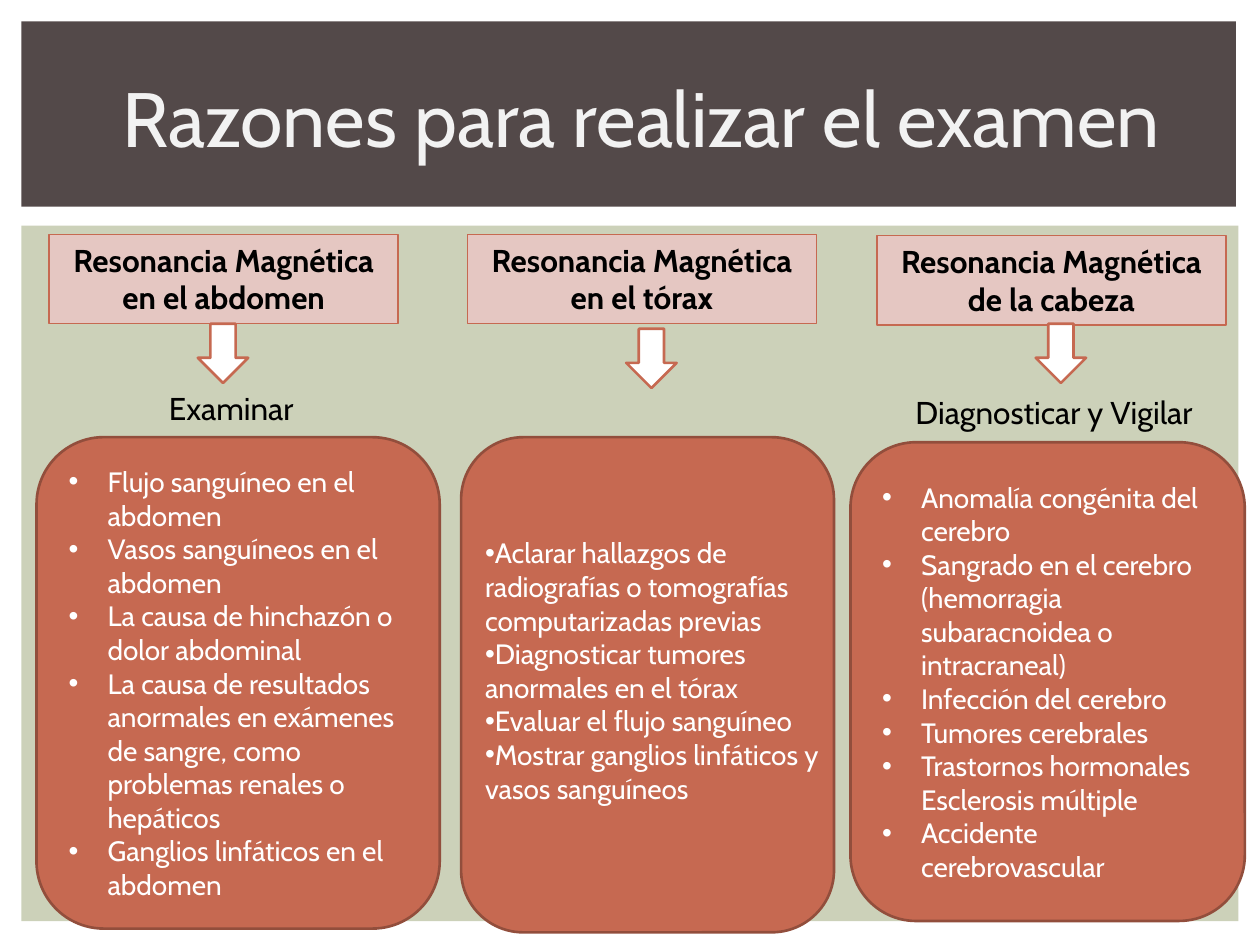
"""Build the slide on the reasons for a magnetic resonance exam."""
from dataclasses import dataclass
from typing import Optional

from lxml.etree import SubElement
from pptx import Presentation
from pptx.dml.color import RGBColor
from pptx.enum.shapes import MSO_SHAPE as Preset
from pptx.enum.text import MSO_ANCHOR as Anchor, MSO_AUTO_SIZE as AutoSize, PP_ALIGN as Align
from pptx.oxml.ns import qn
from pptx.util import Inches, Pt


@dataclass(frozen=True)
class Theme:
    font: str = "Cabin"
    band: str = "534949"
    field: str = "CCD1B9"
    pale: str = "E5C7C2"
    accent: str = "C66951"
    edge: str = "924E3C"
    title: str = "F2F2F2"
    light: str = "FFFFFF"
    dark: str = "000000"
    title_size: int = 44
    label_size: int = 18
    list_size: int = 16


@dataclass(frozen=True)
class Area:
    left: float
    top: float
    width: float
    height: float

    def lengths(self) -> dict:
        return {name: Inches(getattr(self, name)) for name in ("left", "top", "width", "height")}


@dataclass(frozen=True)
class Column:
    heading: str
    heading_at: Area
    arrow_at: Area
    card_at: Area
    reasons: tuple[str, ...]
    verb: str = ""
    verb_at: Optional[Area] = None
    list_at: Optional[Area] = None


THEME = Theme()
HANGING = 0.31

COLUMNS = (
    Column(
        "Resonancia Magnética en el abdomen",
        Area(0.39, 1.86, 2.77, 0.71), Area(1.57, 2.57, 0.4, 0.47), Area(0.29, 3.47, 3.2, 3.9),
        (
            "Flujo sanguíneo en el abdomen",
            "Vasos sanguíneos en el abdomen",
            "La causa de hinchazón o dolor abdominal",
            "La causa de resultados anormales en exámenes de sangre, como problemas renales o hepáticos",
            "Ganglios linfáticos en el abdomen",
        ),
        verb="Examinar", verb_at=Area(0.51, 3.04, 2.65, 0.4),
    ),
    Column(
        "Resonancia Magnética en el tórax",
        Area(3.71, 1.86, 2.77, 0.71), Area(4.97, 2.61, 0.4, 0.47), Area(3.66, 3.47, 2.96, 3.93),
        (
            "Aclarar hallazgos de radiografías o tomografías computarizadas previas",
            "Diagnosticar tumores anormales en el tórax",
            "Evaluar el flujo sanguíneo",
            "Mostrar ganglios linfáticos y vasos sanguíneos",
        ),
        list_at=Area(3.75, 4.06, 2.85, 2.52),
    ),
    Column(
        "Resonancia Magnética de la cabeza",
        Area(6.96, 1.87, 2.77, 0.71), Area(8.22, 2.57, 0.4, 0.47), Area(6.75, 3.51, 3.13, 3.8),
        (
            "Anomalía congénita del cerebro",
            "Sangrado en el cerebro (hemorragia subaracnoidea o intracraneal)",
            "Infección del cerebro",
            "Tumores cerebrales",
            "Trastornos hormonales Esclerosis múltiple",
            "Accidente cerebrovascular",
        ),
        verb="Diagnosticar y Vigilar", verb_at=Area(7.04, 3.07, 2.65, 0.4),
    ),
)


def apply(target, values: dict) -> None:
    """Set each named attribute of the target."""
    for name, value in values.items():
        setattr(target, name, value)


def draw_shape(page, preset, area: Area, fill: str, line: str = "", weight: float = 1.5):
    """Draw a flat preset shape, outlined when a line colour is given."""
    shape = page.shapes.add_shape(preset, **area.lengths())
    shape.shadow.inherit = False
    shape.fill.solid()
    shape.fill.fore_color.rgb = RGBColor.from_string(fill)
    if line:
        shape.line.color.rgb = RGBColor.from_string(line)
        shape.line.width = Pt(weight)
    else:
        shape.line.fill.background()
    return shape


def write(box, lines: tuple[str, ...], size: int, color: str, align=Align.CENTER,
          anchor=Anchor.TOP, bold: bool = False, grow: bool = False) -> None:
    """Write one formatted paragraph for each line."""
    frame = box.text_frame
    apply(frame, {
        "word_wrap": True,
        "vertical_anchor": anchor,
        "auto_size": AutoSize.SHAPE_TO_FIT_TEXT if grow else AutoSize.NONE,
    })
    for index, line in enumerate(lines):
        para = frame.add_paragraph() if index else frame.paragraphs[0]
        apply(para, {"alignment": align, "space_before": Pt(0)})
        span = para.add_run()
        span.text = line
        apply(span.font, {"name": THEME.font, "size": Pt(size), "bold": bold})
        span.font.color.rgb = RGBColor.from_string(color)


def write_list(box, reasons: tuple[str, ...], hanging: float, grow: bool = False) -> None:
    """Write a bulleted list with the given hanging indent."""
    write(box, reasons, THEME.list_size, THEME.light, Align.LEFT, Anchor.MIDDLE, grow=grow)
    for para in box.text_frame.paragraphs:
        properties = para._p.get_or_add_pPr()
        properties.set("marL", str(Inches(hanging)))
        properties.set("indent", str(-Inches(hanging)))
        SubElement(properties, qn("a:buFont"), typeface="Arial")
        SubElement(properties, qn("a:buChar"), char="•")


def place(page, holder, area: Area) -> None:
    """Move a placeholder to the area and to the front."""
    apply(holder, area.lengths())
    page.shapes._spTree.append(holder._element)


def draw_column(page, column: Column, body) -> None:
    """Draw a heading, its arrow, its verb and its card of reasons."""
    heading = draw_shape(page, Preset.RECTANGLE, column.heading_at, THEME.pale, THEME.accent, 0.79)
    write(heading, (column.heading,), THEME.label_size, THEME.dark, bold=True, grow=True)
    draw_shape(page, Preset.DOWN_ARROW, column.arrow_at, THEME.light, THEME.accent)
    if column.verb_at:
        verb = page.shapes.add_textbox(**column.verb_at.lengths())
        write(verb, (column.verb,), THEME.label_size, THEME.dark, grow=True)
    card = draw_shape(page, Preset.ROUNDED_RECTANGLE, column.card_at, THEME.accent, THEME.edge)
    if column.list_at:
        place(page, body, column.list_at)
        write_list(body, column.reasons, 0, grow=True)
    else:
        write_list(card, column.reasons, HANGING)


def main() -> None:
    """Build and save the deck."""
    deck = Presentation()
    apply(deck, {"slide_width": Inches(10), "slide_height": Inches(7.5)})
    page = deck.slides.add_slide(deck.slide_layouts[1])
    title, body = page.placeholders
    draw_shape(page, Preset.RECTANGLE, Area(0.17, 1.79, 9.66, 5.52), THEME.field)
    draw_shape(page, Preset.RECTANGLE, Area(0.17, 0.17, 9.64, 1.47), THEME.band)
    place(page, title, Area(0.59, 0.3, 9, 1.25))
    write(title, ("Razones para realizar el examen",), THEME.title_size, THEME.title,
          anchor=Anchor.MIDDLE)
    for column in COLUMNS:
        draw_column(page, column, body)
    deck.save("out.pptx")


if __name__ == "__main__":
    main()
